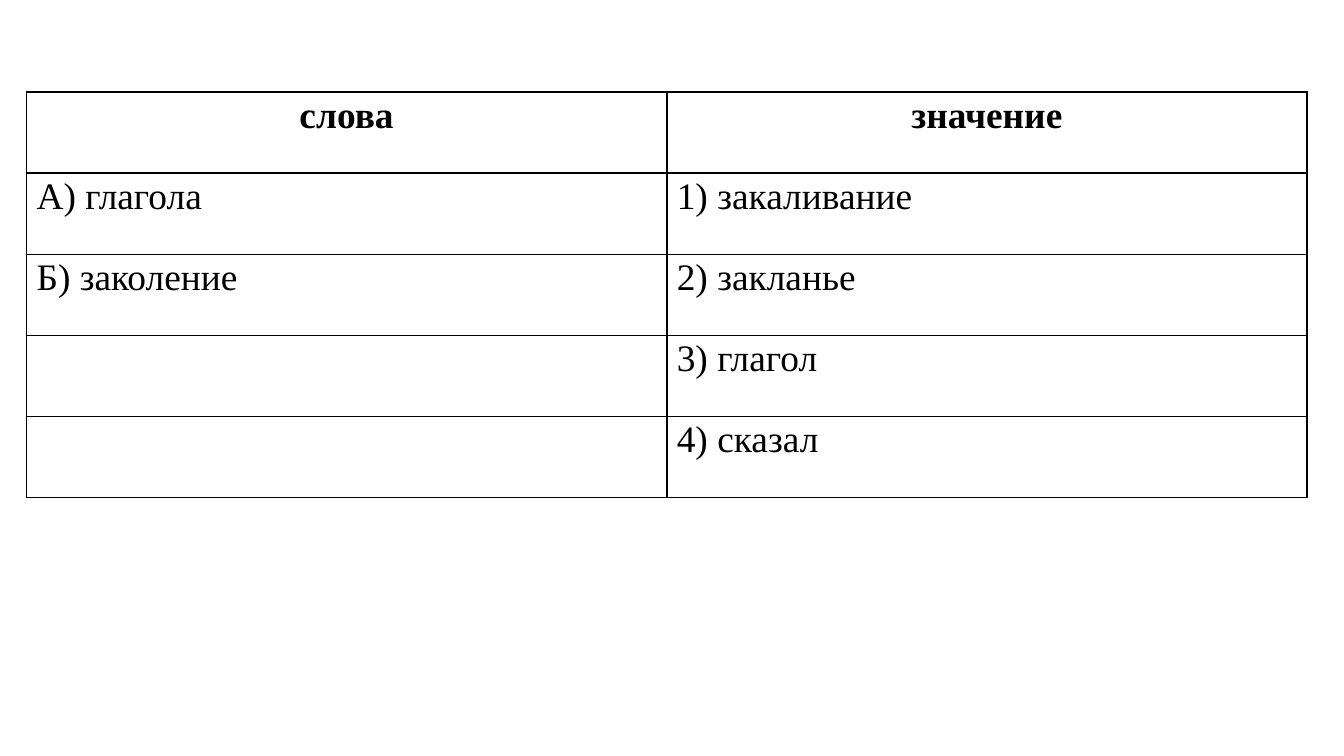
from lxml.etree import SubElement as Sub
from pptx import Presentation
from pptx.dml.color import RGBColor as RGB
from pptx.enum.text import PP_ALIGN as AL
from pptx.oxml.ns import qn
from pptx.util import Pt

COLORS = {"ink": "000000", "page": "FFFFFF"}
ROWS = [
    ("слова", "значение"),
    ("А) глагола", "1) закаливание"),
    ("Б) заколение", "2) закланье"),
    ("", "3) глагол"),
    ("", "4) сказал"),
]


class Deck:
    """Holds the text style and the current slide."""

    def __init__(self, prs):
        self.font = {"name": "Times New Roman", "size": Pt(20)}
        self.margins = {"margin_left": Pt(5.4), "margin_right": Pt(5.4),
                        "margin_top": 0, "margin_bottom": 0}
        self.s = prs.slides.add_slide(prs.slide_layouts[6])
        fill = self.s.background.fill
        fill.solid()
        fill.fore_color.rgb = RGB.from_string(COLORS["page"])

    def border(self, cell, width):
        tc_pr = cell._tc.get_or_add_tcPr()
        for side in ("lnL", "lnR", "lnT", "lnB"):
            ln = Sub(tc_pr, qn(f"a:{side}"), w=str(Pt(width)))
            fill = Sub(ln, qn("a:solidFill"))
            Sub(fill, qn("a:srgbClr"), val=COLORS["ink"])

    def cell(self, cell, text, header):
        for key, value in self.margins.items():
            setattr(cell, key, value)
        self.border(cell, 1)
        cell.fill.background()
        p = cell.text_frame.paragraphs[0]
        p.alignment = AL.CENTER if header else AL.LEFT
        p.line_spacing = 1.07
        if text:
            r = p.add_run()
            r.text = text
            for key, value in {**self.font, "bold": header}.items():
                setattr(r.font, key, value)
            r.font.color.rgb = RGB.from_string(COLORS["ink"])

    def table(self, rows, left, top, col_width, row_height):
        n, m = len(rows), len(rows[0])
        tbl = self.s.shapes.add_table(n, m, Pt(left), Pt(top), Pt(m * col_width),
                                      Pt(n * row_height)).table
        tbl.first_row = tbl.horz_banding = False
        for i, row in enumerate(rows):
            for j, text in enumerate(row):
                self.cell(tbl.cell(i, j), text, i == 0)


def main():
    prs = Presentation()
    prs.slide_width, prs.slide_height = Pt(720), Pt(405)
    deck = Deck(prs)
    deck.table(ROWS, 14.2, 49.4, 343, 43.45)
    prs.save("out.pptx")


if __name__ == "__main__":
    main()
